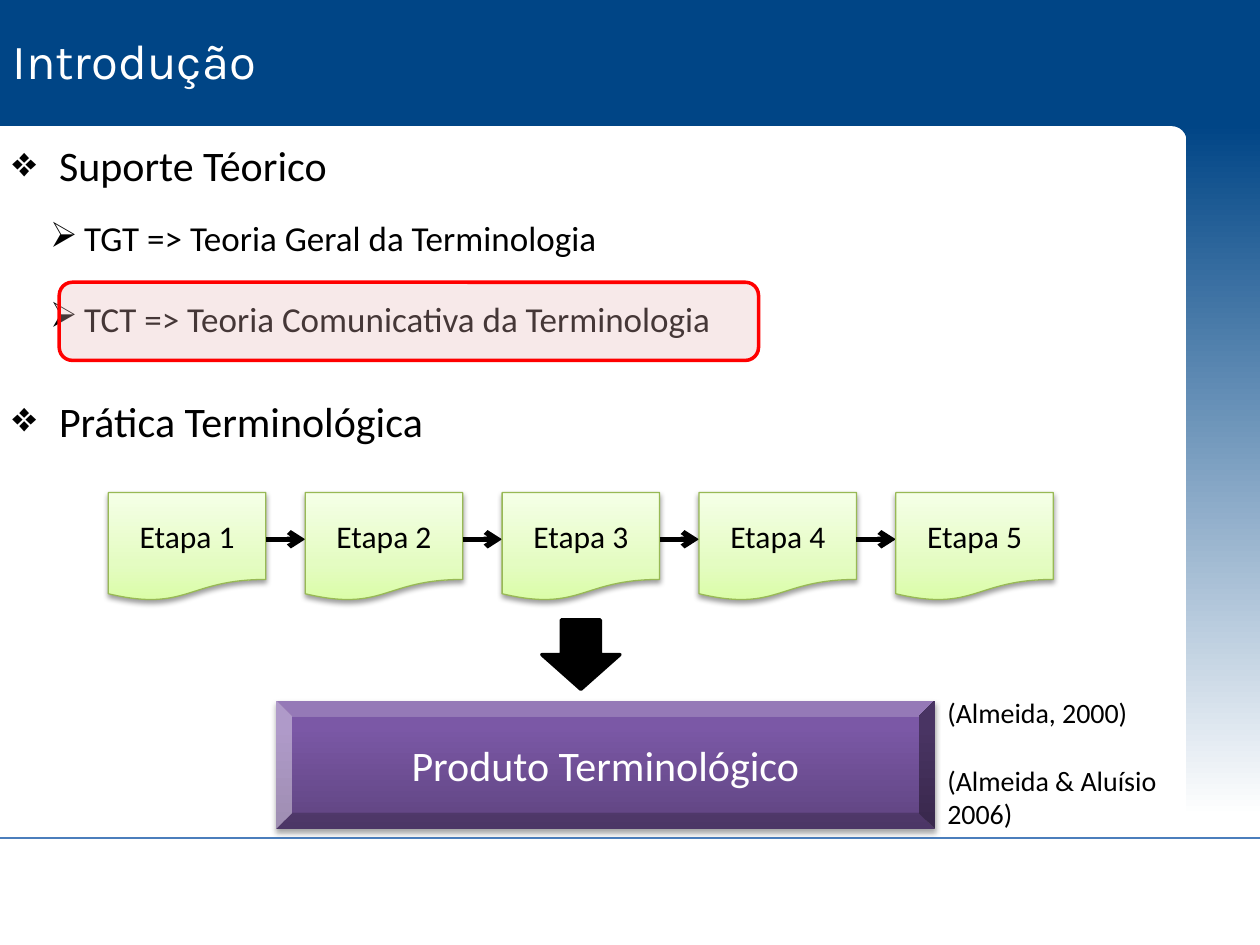
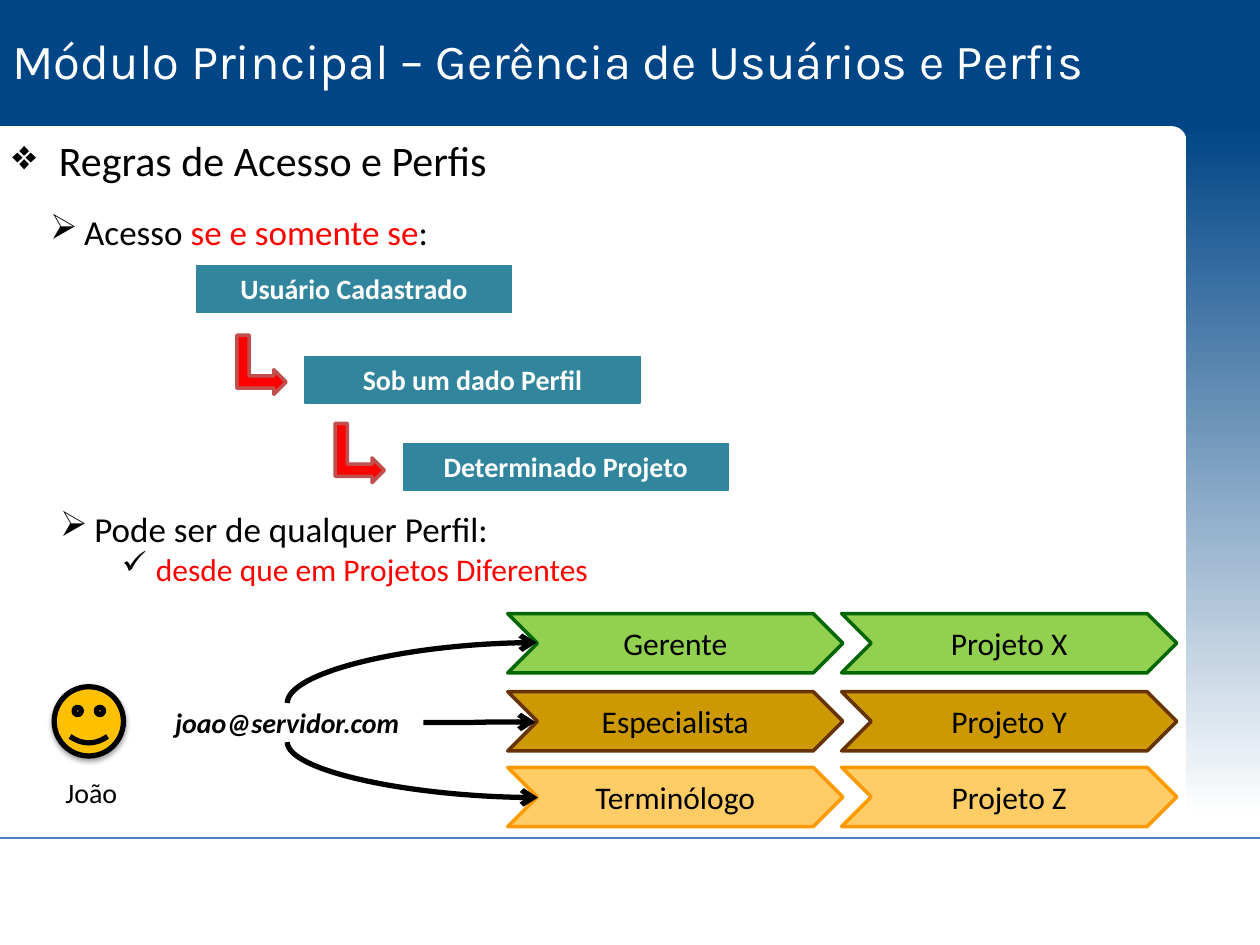
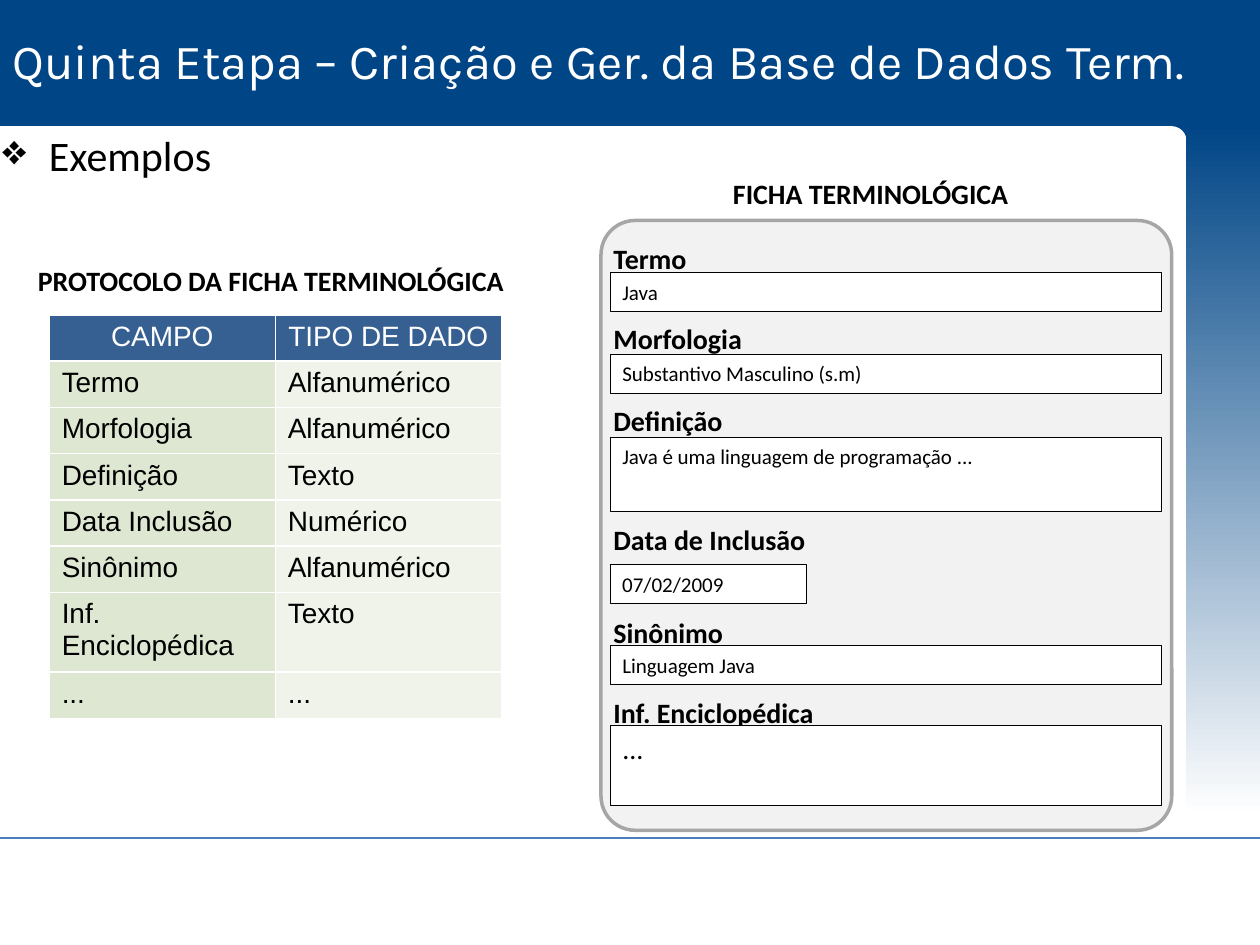
from lxml.etree import SubElement
from pptx import Presentation
from pptx.dml.color import RGBColor
from pptx.enum.shapes import MSO_CONNECTOR, MSO_SHAPE
from pptx.enum.text import MSO_ANCHOR, PP_ALIGN
from pptx.oxml.ns import qn
from pptx.util import Inches, Pt

# Shared look
NAVY, BLUE, RULE = "004586", "376092", "4B7EBC"
BLACK, WHITE, RED, TEAL = "000000", "FFFFFF", "FF0000", "31859C"
BODY, HEAD, GRID = "Calibri", "Karla", "Arial"
LEFT, MID = PP_ALIGN.LEFT, PP_ALIGN.CENTER
# Bullet sign, text indent and hang of each list level
LEVELS = [("❖", 0.37, 0.37), ("➢", 0.57, 0.27), ("✓", 1.06, 0.27)]


def tint(code):
    return RGBColor.from_string(code)


def place(*at):
    return [Inches(v) for v in at]


def add(parent, tag, **attrs):
    return SubElement(parent, qn(tag), {k: str(v) for k, v in attrs.items()})


# Text
def style(run, size, color=BLACK, font=BODY, bold=False, italic=False):
    run.font.size = Pt(size)
    run.font.name = font
    run.font.bold = bold
    run.font.italic = italic
    run.font.color.rgb = tint(color)


def write(frame, text, size, align=LEFT, anchor=MSO_ANCHOR.TOP, **look):
    frame.word_wrap = True
    frame.vertical_anchor = anchor
    frame.text = text
    for par in frame.paragraphs:
        par.alignment = align
        for run in par.runs:
            style(run, size, **look)


def label(slide, at, text, size=16, **look):
    area = slide.shapes.add_textbox(*place(*at))
    write(area.text_frame, text, size, **look)
    return area.text_frame


def outline(slide, at, items, spacing=1.0):
    """Bulleted list; each item is (level, size, space before, pieces)."""
    frame = slide.shapes.add_textbox(*place(*at)).text_frame
    frame.word_wrap = True
    for i, (level, size, gap, pieces) in enumerate(items):
        par = frame.add_paragraph() if i else frame.paragraphs[0]
        sign, indent, hang = LEVELS[level]
        props = par._p.get_or_add_pPr()
        props.set("marL", str(Inches(indent)))
        props.set("indent", str(-Inches(hang)))
        add(add(props, "a:buClr"), "a:srgbClr", val=BLACK)
        add(props, "a:buChar", char=sign)
        par.level = level
        par.line_spacing = spacing
        if gap:
            par.space_before = Pt(gap)
        for text, color in pieces:
            run = par.add_run()
            run.text = text
            style(run, size, color)


# Shapes
def shape(slide, kind, at, fill, line=None, width=2.0):
    item = slide.shapes.add_shape(kind, *place(*at))
    item.shadow.inherit = False
    item.fill.solid()
    item.fill.fore_color.rgb = tint(fill)
    if line:
        item.line.color.rgb = tint(line)
        item.line.width = Pt(width)
    else:
        item.line.fill.background()
    return item


def blend(item, stops, angle):
    item.fill.gradient()
    item.fill.gradient_angle = angle
    ramp = item.element.spPr.find(qn("a:gradFill")).find(qn("a:gsLst"))
    for old in list(ramp):
        ramp.remove(old)
    for pos, color in stops:
        add(add(ramp, "a:gs", pos=pos * 1000), "a:srgbClr", val=color)


def shade(item, alpha=38, drop=1.6):
    cast = add(item.element.spPr.find(qn("a:effectLst")), "a:outerShdw",
               blurRad=Pt(3.1), dist=Pt(drop), dir=5400000, rotWithShape=0)
    add(add(cast, "a:srgbClr", val=BLACK), "a:alpha", val=alpha * 1000)


# Lines
def link(slide, kind, ends, color=BLACK, width=3.0, arrow=True):
    line = slide.shapes.add_connector(kind, *place(*ends))
    line.line.color.rgb = tint(color)
    line.line.width = Pt(width)
    if arrow:
        add(line.line._ln, "a:tailEnd", type="arrow")
    add(line._element.spPr, "a:effectLst")
    return line


def bend(slide, x1, y1, x2, y2):
    """Quarter curve that leaves vertically and arrives horizontally."""
    up = y2 < y1
    midx, midy = (x1 + x2) / 2, (y1 + y2) / 2
    dx, dy = abs(y2 - y1) / 2, (x2 - x1) / 2 * (1 if up else -1)
    curve = link(slide, MSO_CONNECTOR.CURVE,
                 (midx + dx, midy + dy, midx - dx, midy - dy))
    props = curve._element.spPr
    props.find(qn("a:xfrm")).set("rot", str((90 if up else 270) * 60000))
    props.find(qn("a:prstGeom")).set("prst", "curvedConnector2")


# Table
def table(slide, at, rows, high):
    x, y, w = at
    grid = slide.shapes.add_table(len(rows), len(rows[0]),
                                  *place(x, y, w, high * len(rows))).table
    grid.first_row = grid.horz_banding = False
    for r, row in enumerate(rows):
        grid.rows[r].height = Inches(high)
        for c, text in enumerate(row):
            cell = grid.cell(r, c)
            props = cell._tc.get_or_add_tcPr()
            for side in "LRTB":
                edge = add(props, "a:ln" + side, w=Pt(1))
                add(add(edge, "a:solidFill"), "a:srgbClr", val=WHITE)
            cell.fill.solid()
            cell.fill.fore_color.rgb = tint(
                ("DEE7D1", "EFF3EA")[c] if r else BLUE)
            write(cell.text_frame, text, 16, LEFT if r else MID,
                  color=BLACK if r else WHITE, font=GRID)


# Frame of every slide
def base(deck, title):
    slide = deck.slides.add_slide(deck.slide_layouts[6])
    link(slide, MSO_CONNECTOR.STRAIGHT, (0, 6.65, 10, 6.65), RULE, 0.75, False)
    shape(slide, MSO_SHAPE.RECTANGLE, (0, 0, 10, 1), NAVY)
    notch = shape(slide, MSO_SHAPE.PLAQUE, (9.3, 0.28, 0.7, 0.84), NAVY)
    notch.adjustments[0] = 0.17
    band = shape(slide, MSO_SHAPE.RECTANGLE, (9.41, 0.98, 0.59, 5.5), NAVY)
    blend(band, [(0, NAVY), (100, WHITE)], 270)
    frame = label(slide, (0, 0.23, 10, 0.63), title, 28, color=WHITE, font=HEAD)
    frame.paragraphs[0].line_spacing = 0.95
    return slide


def intro(deck):
    slide = base(deck, "Introdução")
    outline(slide, (0, 1.09, 9.38, 1.67), [
        (0, 24, 0, [("Suporte Téorico", BLACK)]),
        (1, 20, 16.2, [("TGT => Teoria Geral da Terminologia", BLACK)]),
        (1, 20, 23.2, [("TCT => Teoria Comunicativa da Terminologia", BLACK)]),
    ], 0.95)
    outline(slide, (0, 3.12, 9.38, 0.49),
            [(0, 24, 0, [("Prática Terminológica", BLACK)])], 0.95)
    mark = shape(slide, MSO_SHAPE.ROUNDED_RECTANGLE, (0.47, 2.24, 5.55, 0.62),
                 "E6B9B8", RED)
    add(mark.element.spPr.find(qn("a:solidFill"))[0], "a:alpha", val=30000)

    # Chain of steps
    left, wide, step, count = 0.86, 1.25, 1.5625, 5
    for i in range(count):
        x = left + i * step
        page = shape(slide, MSO_SHAPE.FLOWCHART_DOCUMENT, (x, 3.91, wide, 0.86),
                     "E4FCC2", "98B955", 0.75)
        blend(page, [(0, "DAFDA7"), (35, "E4FCC2"), (100, "F5FFE7")], 90)
        shade(page)
        write(page.text_frame, f"Etapa {i + 1}", 18, MID, MSO_ANCHOR.MIDDLE)
        if i < count - 1:
            link(slide, MSO_CONNECTOR.STRAIGHT,
                 (x + wide, 4.28, x + step, 4.28))

    # Result
    goal = shape(slide, MSO_SHAPE.BEVEL, (2.19, 5.56, 5.23, 1.02), "7B58A6")
    blend(goal, [(0, "5F4480"), (80, "7B58A6"), (100, "7C57A8")], 90)
    shade(goal, 35, 1.8)
    write(goal.text_frame, "Produto Terminológico", 24, MID,
          MSO_ANCHOR.MIDDLE, color=WHITE)
    shape(slide, MSO_SHAPE.DOWN_ARROW, (4.3, 4.92, 0.62, 0.55), BLACK, BLACK)
    cites = label(slide, (7.42, 5.47, 1.88, 1.18),
                  "(Almeida, 2000)\n(Almeida & Aluísio 2006)")
    cites.paragraphs[1].space_before = Pt(19.5)


def access(deck):
    slide = base(deck, "Módulo Principal – Gerência de Usuários e Perfis")
    outline(slide, (0, 1.02, 9.3, 1.04), [
        (0, 24, 0, [("Regras de Acesso e Perfis", BLACK)]),
        (1, 20, 14.6, [("Acesso ", BLACK), ("se e somente se", RED),
                       (":", BLACK)]),
    ])

    # Stairs of conditions
    for x, y, wide, text in [(1.56, 2.11, 2.5, "Usuário Cadastrado"),
                             (2.42, 2.83, 2.66, "Sob um dado Perfil"),
                             (3.2, 3.52, 2.58, "Determinado Projeto")]:
        stair = shape(slide, MSO_SHAPE.RECTANGLE, (x, y, wide, 0.37),
                      TEAL, TEAL, 0.75)
        write(stair.text_frame, text, 16, MID, color=WHITE, bold=True)
    for x, y in [(1.84, 2.7), (2.62, 3.4)]:
        turn = shape(slide, MSO_SHAPE.BENT_UP_ARROW, (x, y, 0.47, 0.39),
                     RED, "C0504D")
        turn.rotation = 90
    outline(slide, (0.08, 3.98, 9.3, 0.77), [
        (1, 20, 0, [("Pode ser de qualquer Perfil:", BLACK)]),
        (2, 18, 0, [("desde que em Projetos Diferentes", RED)]),
    ])

    # Roles and projects
    for y, fill, line, role, plan in [
            (4.87, "92D050", "006600", "Gerente", "Projeto X"),
            (5.49, "CC9900", "663300", "Especialista", "Projeto Y"),
            (6.09, "FFCC66", "FF9900", "Terminólogo", "Projeto Z")]:
        for x, text in [(4.03, role), (6.68, plan)]:
            tag = shape(slide, MSO_SHAPE.CHEVRON, (x, y, 2.66, 0.47),
                        fill, line)
            write(tag.text_frame, text, 18, MID, MSO_ANCHOR.MIDDLE)

    # User
    face = shape(slide, MSO_SHAPE.SMILEY_FACE, (0.43, 5.45, 0.55, 0.55),
                 "FFC000", BLACK, 3)
    face.adjustments[0] = 0.05
    shade(face)
    label(slide, (0.18, 6.11, 1.09, 0.37), "João", align=MID)
    mail = shape(slide, MSO_SHAPE.ROUNDED_RECTANGLE, (1.2, 5.58, 2.16, 0.31),
                 WHITE, WHITE)
    write(mail.text_frame, "joao@servidor.com", 16, MID, MSO_ANCHOR.MIDDLE,
          bold=True, italic=True)
    bend(slide, 2.28, 5.58, 4.26, 5.1)
    link(slide, MSO_CONNECTOR.CURVE,
         (3.36, 5.73, 4.25, 5.73)).begin_connect(mail, 3)
    bend(slide, 2.28, 5.89, 4.27, 6.33)


def sample(deck):
    slide = base(deck, "Quinta Etapa – Criação e Ger. da Base de Dados Term.")
    outline(slide, (-0.08, 0.98, 8.28, 0.5),
            [(0, 24, 0, [("Exemplos", BLACK)])])
    table(slide, (0.39, 2.5, 3.59), [
        ("CAMPO", "TIPO DE DADO"),
        ("Termo", "Alfanumérico"),
        ("Morfologia", "Alfanumérico"),
        ("Definição", "Texto"),
        ("Data Inclusão", "Numérico"),
        ("Sinônimo", "Alfanumérico"),
        ("Inf. Enciclopédica", "Texto"),
        ("...", "..."),
    ], 0.31)

    # Form: label top, field top, field width and height
    card = shape(slide, MSO_SHAPE.ROUNDED_RECTANGLE, (4.77, 1.75, 4.53, 4.84),
                 "F2F2F2", "A6A6A6")
    card.adjustments[0] = 0.06
    for name, top, y, wide, high, text, size in [
            ("Termo", 1.87, 2.16, 4.38, 0.31, "Java", 12),
            ("Morfologia", 2.5, 2.81, 4.38, 0.31,
             "Substantivo Masculino (s.m)", 12),
            ("Definição", 3.15, 3.47, 4.38, 0.59,
             "Java é uma linguagem de programação ...", 12),
            ("Data de Inclusão", 4.1, 4.48, 1.56, 0.31, "07/02/2009", 12),
            ("Sinônimo", 4.84, 5.12, 4.38, 0.31, "Linguagem Java", 12),
            ("Inf. Enciclopédica", 5.47, 5.76, 4.38, 0.63, "...", 16)]:
        label(slide, (4.77, top, 2.11, 0.37), name, bold=True)
        field = shape(slide, MSO_SHAPE.RECTANGLE, (4.84, y, wide, high),
                      WHITE, BLACK, 0.25)
        write(field.text_frame, text, size,
              anchor=MSO_ANCHOR.TOP if high > 0.5 else MSO_ANCHOR.MIDDLE)

    # Captions
    for x, y, text in [(0.08, 2.04, "PROTOCOLO DA FICHA TERMINOLÓGICA"),
                       (4.84, 1.35, "FICHA TERMINOLÓGICA")]:
        label(slide, (x, y, 4.14, 0.37), text, align=MID, bold=True)


def main():
    deck = Presentation()
    deck.slide_width, deck.slide_height = Inches(10), Inches(7.5)
    intro(deck)
    access(deck)
    sample(deck)
    deck.save("out.pptx")


if __name__ == "__main__":
    main()
